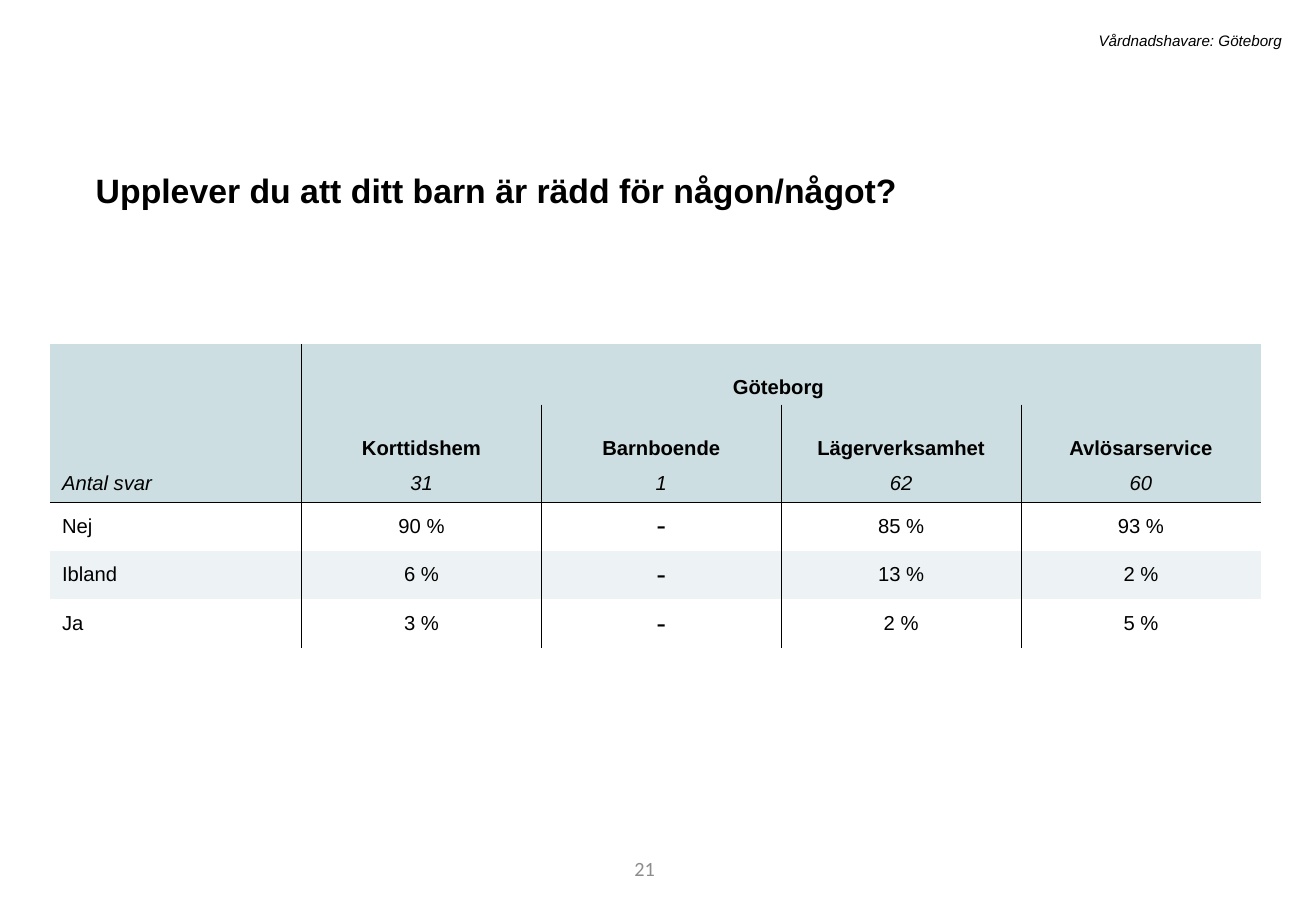
import pptx
import pptx.util
import pptx.dml.color
import pptx.enum.text
import pptx.oxml.ns
import lxml.etree

Pt = pptx.util.Pt
RGBColor = pptx.dml.color.RGBColor
PP_ALIGN = pptx.enum.text.PP_ALIGN
MSO_ANCHOR = pptx.enum.text.MSO_ANCHOR
qn = pptx.oxml.ns.qn

BLACK = RGBColor(0x00, 0x00, 0x00)
GREY = RGBColor(0x8C, 0x8C, 0x8C)
HEADER_FILL = RGBColor(0xCC, 0xDE, 0xE1)
BAND_FILL = RGBColor(0xED, 0xF3, 0xF4)
PLAIN_STYLE = "{2D5ABB26-0587-4C30-8999-92F81FD0307C}"


def style_text(paragraph, text, size, font="Arial", color=BLACK, bold=False,
               italic=False, align=PP_ALIGN.LEFT):
    paragraph.text = text
    paragraph.alignment = align
    paragraph.font.size = Pt(size)
    paragraph.font.name = font
    paragraph.font.color.rgb = color
    paragraph.font.bold = bold
    paragraph.font.italic = italic


def add_border(cell, side, visible):
    line = lxml.etree.SubElement(cell._tc.get_or_add_tcPr(), qn("a:ln" + side))
    line.set("w", str(Pt(0.25)))
    if visible:
        solid = lxml.etree.SubElement(line, qn("a:solidFill"))
        lxml.etree.SubElement(solid, qn("a:srgbClr")).set("val", str(BLACK))
    else:
        lxml.etree.SubElement(line, qn("a:noFill"))


presentation = pptx.Presentation()
presentation.slide_width = Pt(780)
presentation.slide_height = Pt(540)
slide = presentation.slides.add_slide(presentation.slide_layouts[6])

page_number = slide.shapes.add_textbox(Pt(219.6), Pt(500.4), Pt(175.7), Pt(28.8)).text_frame
page_number.word_wrap = True
page_number.vertical_anchor = MSO_ANCHOR.MIDDLE
style_text(page_number.paragraphs[0], "21", 12, "Calibri", GREY, align=PP_ALIGN.RIGHT)

question = slide.shapes.add_textbox(Pt(49.7), Pt(92.2), Pt(676.8), Pt(33.8)).text_frame
question.word_wrap = True
question.paragraphs[0].line_spacing = 1.2
question.paragraphs[0].space_before = Pt(10)
style_text(question.paragraphs[0], "Upplever du att ditt barn är rädd för någon/något?", 20, bold=True)

respondents = slide.shapes.add_textbox(Pt(128.9), Pt(15.1), Pt(637.9), Pt(18)).text_frame
respondents.word_wrap = True
style_text(respondents.paragraphs[0], "Vårdnadshavare: Göteborg", 9, italic=True, align=PP_ALIGN.RIGHT)

answers = [
    ["", "Göteborg ", "", "", ""],
    ["", "Korttidshem", "Barnboende", "Lägerverksamhet", "Avlösarservice"],
    ["Antal svar", "31", "1", "62", "60"],
    ["Nej", "90 %", "-", "85 %", "93 %"],
    ["Ibland", "6 %", "-", "13 %", "2 %"],
    ["Ja", "3 %", "-", "2 %", "5 %"],
]
row_heights = [36, 36, 21.6, 28.8, 28.8, 28.8]
column_widths = [149.2] + [142.15] * 4
COUNT_ROW = 2
BAND_ROW = 4

table = slide.shapes.add_table(
    len(row_heights), len(column_widths), Pt(29.6), Pt(203.9),
    Pt(sum(column_widths)), Pt(sum(row_heights))).table
table.first_row = False
table.horz_banding = False
table._tbl.tblPr.find(qn("a:tableStyleId")).text = PLAIN_STYLE
for column, width in zip(table.columns, column_widths):
    column.width = Pt(width)
for row, height in zip(table.rows, row_heights):
    row.height = Pt(height)
table.cell(0, 1).merge(table.cell(0, 4))

for r, values in enumerate(answers):
    for c, value in enumerate(values):
        cell = table.cell(r, c)
        add_border(cell, "L", c == 1 or (c > 1 and r > 0))
        add_border(cell, "R", c == 0 or (c < 4 and r > 0))
        add_border(cell, "T", r == COUNT_ROW + 1)
        add_border(cell, "B", r == COUNT_ROW)
        if r <= COUNT_ROW:
            cell.fill.solid()
            cell.fill.fore_color.rgb = HEADER_FILL
        elif r == BAND_ROW:
            cell.fill.solid()
            cell.fill.fore_color.rgb = BAND_FILL
        else:
            cell.fill.background()
        cell.vertical_anchor = MSO_ANCHOR.BOTTOM if r < COUNT_ROW else MSO_ANCHOR.MIDDLE
        missing = value == "-"
        style_text(cell.text_frame.paragraphs[0], value,
                   18 if missing else 12, "Calibri" if missing else "Arial",
                   bold=r < COUNT_ROW, italic=r == COUNT_ROW,
                   align=PP_ALIGN.CENTER if c else PP_ALIGN.LEFT)

presentation.save("out.pptx")
